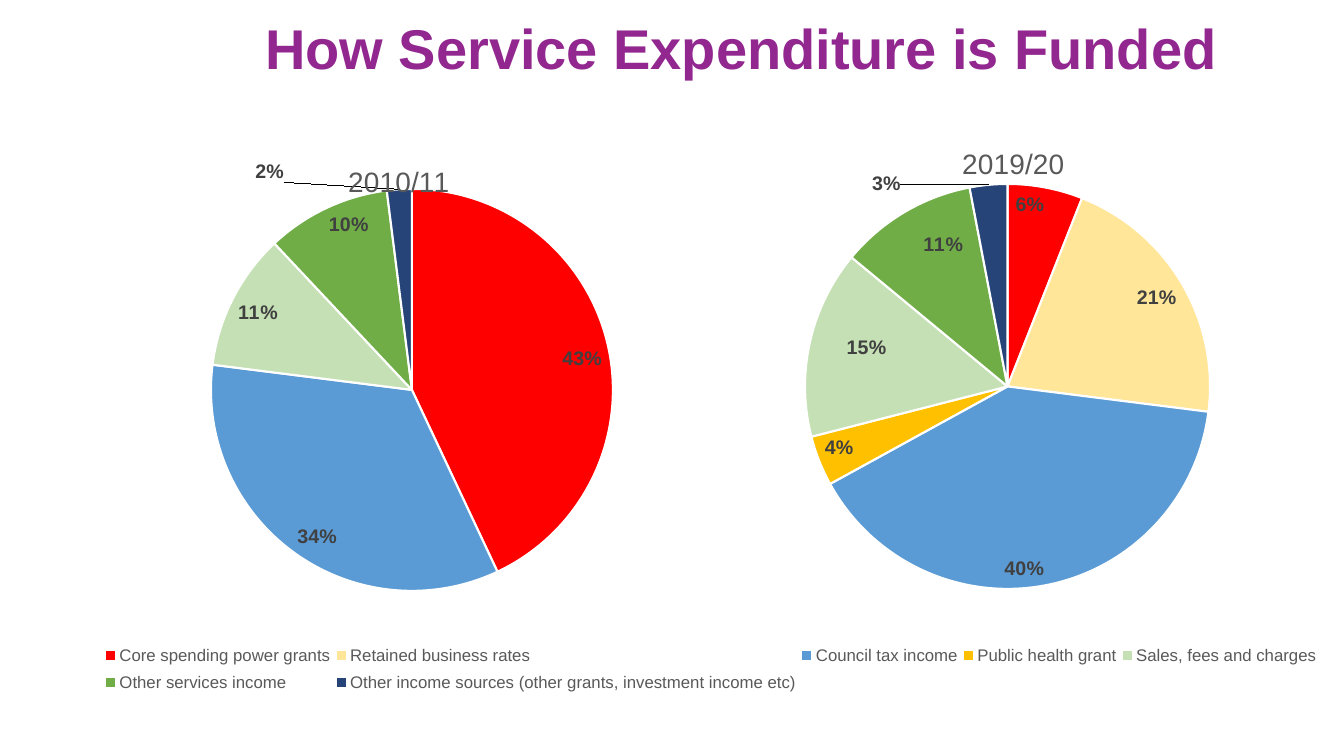
import pptx
import pptx.util
import pptx.dml.color
import pptx.chart.data
import pptx.enum.chart
import pptx.enum.text
import pptx.oxml

PX = 9071
TITLE = "How Service Expenditure is Funded"
NAMES = [
    "Core spending power grants",
    "Retained business rates",
    "Council tax income",
    "Public health grant",
    "Sales, fees and charges",
    "Other services income",
    "Other income sources (other grants, investment income etc)",
]
FILLS = ["FF0000", "FFE699", "5B9BD5", "FFC000", "C5E0B4", "70AD47", "264478"]
PIES = [
    {
        "title": "2019/20",
        "cats": NAMES,
        "vals": [6, 21, 40, 4, 15, 11, 3],
        "box": (79, 121, 1249, 596),
        "head": (957, 141),
        "plot": (805, 184, 405, 405),
        "moves": {4: (31, -7), 5: (16, 16), 6: (-117, -18)},
        "legend": (100, 637, 1222, 64),
    },
    {
        "title": "2010/11",
        "cats": ["1", "2", "3", "4", "5", "6", "7"],
        "vals": [43, 0, 34, 0, 11, 10, 2],
        "box": (0, 137, 787, 498),
        "head": (343, 159),
        "plot": (211, 189, 402, 402),
        "moves": {6: (-130, -35)},
        "legend": None,
    },
]


def px(n):
    return pptx.util.Emu(n * PX)


def color(text):
    return pptx.dml.color.RGBColor.from_string(text)


def style(font, size, fill, bold=False):
    font.name = "Arial"
    font.size = pptx.util.Pt(size)
    font.bold = bold
    font.color.rgb = color(fill)


def layout(box, spot, inner=False, move=False):
    left, top, width, height = box
    parts = [("layoutTarget", "inner")] if inner else []
    if not move:
        parts += [("xMode", "edge"), ("yMode", "edge")]
        spot = (spot[0] - left, spot[1] - top, *spot[2:])
    sizes = (width, height, width, height)
    parts += [(key, round(n / size, 4)) for key, n, size in zip("xywh", spot, sizes)]
    body = "".join(f'<c:{key} val="{val}"/>' for key, val in parts)
    space = "http://schemas.openxmlformats.org/drawingml/2006/chart"
    return pptx.oxml.parse_xml(
        f'<c:layout xmlns:c="{space}"><c:manualLayout>{body}</c:manualLayout></c:layout>'
    )


def place(node, after, part):
    for old in node.xpath("./c:layout"):
        node.remove(old)
    if after:
        node.xpath(f"./c:{after}")[0].addnext(part)
    else:
        node.insert(0, part)


def label(series, pie):
    marks = series.data_labels
    marks.show_value = False
    marks.show_percentage = True
    marks.number_format = "0%"
    marks.number_format_is_linked = False
    marks.position = pptx.enum.chart.XL_LABEL_POSITION.INSIDE_END
    style(marks.font, 14, "404040", True)
    for i, val in enumerate(pie["vals"]):
        if val and i not in pie["moves"]:
            continue
        mark = series.points[i].data_label
        style(mark.font, 14, "404040", True)
        mark.position = pptx.enum.chart.XL_LABEL_POSITION.INSIDE_END
        node = series._element.xpath(f'.//c:dLbl[c:idx/@val="{i}"]')[0]
        if val:
            node.xpath("./c:showVal")[0].set("val", "0")
            node.xpath("./c:showPercent")[0].set("val", "1")
            place(node, "idx", layout(pie["box"], pie["moves"][i], move=True))
        else:
            for kid in node[1:]:
                node.remove(kid)
            gone = node.makeelement(node.tag.replace("dLbl", "delete"), {"val": "1"})
            node.append(gone)


def draw(slide, pie):
    data = pptx.chart.data.CategoryChartData()
    data.categories = pie["cats"]
    data.add_series("Series 1", pie["vals"])
    box = pie["box"]
    kind = pptx.enum.chart.XL_CHART_TYPE.PIE
    chart = slide.shapes.add_chart(kind, *map(px, box), data).chart
    style(chart.font, 10, "000000")
    chart.has_title = True
    head = chart.chart_title
    head.text_frame.text = pie["title"]
    style(head.text_frame.paragraphs[0].runs[0].font, 20, "595959")
    place(head._element, "tx", layout(box, pie["head"]))
    plot = chart.plots[0]
    plot.vary_by_categories = True
    area = chart._chartSpace.xpath(".//c:plotArea")[0]
    place(area, None, layout(box, pie["plot"], inner=True))
    series = plot.series[0]
    for i, fill in enumerate(FILLS):
        shape = series.points[i].format
        shape.fill.solid()
        shape.fill.fore_color.rgb = color(fill)
        shape.line.color.rgb = color("FFFFFF")
        shape.line.width = pptx.util.Pt(1.5)
    label(series, pie)
    chart.has_legend = bool(pie["legend"])
    if pie["legend"]:
        legend = chart.legend
        legend.position = pptx.enum.chart.XL_LEGEND_POSITION.BOTTOM
        legend.include_in_layout = False
        style(legend.font, 12, "595959")
        place(legend._element, "legendPos", layout(box, pie["legend"]))


def main():
    deck = pptx.Presentation()
    deck.slide_width, deck.slide_height = px(1344), px(756)
    slide = deck.slides.add_slide(deck.slide_layouts[5])
    title = slide.shapes.title
    title.left, title.top, title.width, title.height = map(px, (179, 8, 1124, 78))
    frame = title.text_frame
    frame.text = TITLE
    frame.word_wrap = True
    frame.vertical_anchor = pptx.enum.text.MSO_ANCHOR.MIDDLE
    line = frame.paragraphs[0]
    line.alignment = pptx.enum.text.PP_ALIGN.CENTER
    style(line.runs[0].font, 40, "91278F", True)
    for pie in PIES:
        draw(slide, pie)
    deck.save("out.pptx")


if __name__ == "__main__":
    main()
